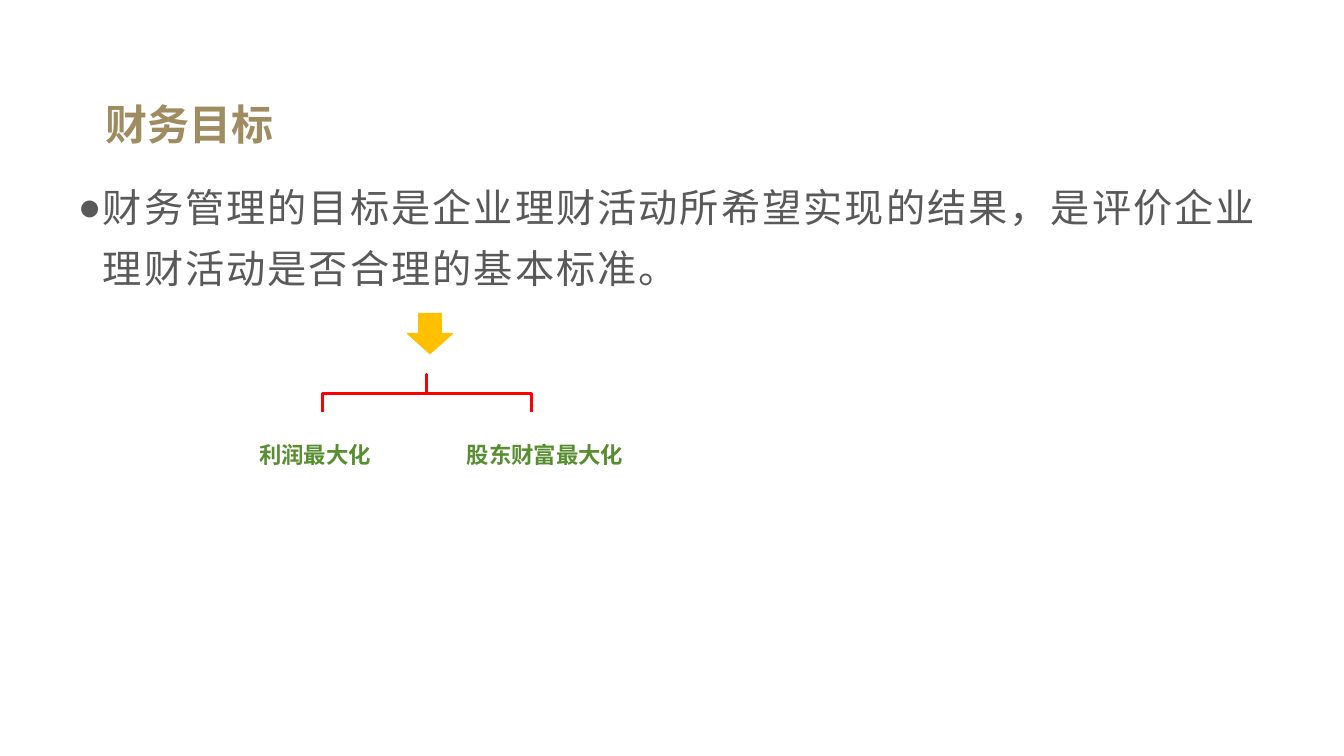
from lxml import etree
from pptx import Presentation
from pptx.dml.color import RGBColor
from pptx.enum.shapes import MSO_SHAPE
from pptx.enum.text import MSO_ANCHOR, MSO_AUTO_SIZE, PP_ALIGN
from pptx.oxml.ns import qn
from pptx.util import Pt

PX = 914400 / 100.8
GOLD = RGBColor(0x9F, 0x8C, 0x61)
GREY = RGBColor(0x59, 0x59, 0x59)
AMBER = RGBColor(0xFF, 0xC0, 0x00)
RED = RGBColor(0xFF, 0x00, 0x00)
GREEN = RGBColor(0x58, 0x8E, 0x31)
CJK_FONT = "Noto Sans CJK SC"
ARROW, BRACE = MSO_SHAPE.RIGHT_ARROW, MSO_SHAPE.RIGHT_BRACE
MIDDLE, TOP = MSO_ANCHOR.MIDDLE, MSO_ANCHOR.TOP
CENTER = PP_ALIGN.CENTER
GROW = MSO_AUTO_SIZE.SHAPE_TO_FIT_TEXT


def px(length):
    return round(length * PX)


def add_text(page, box, text, size, color, bold=False, font=CJK_FONT, anchor=TOP):
    """Place one paragraph in a wrapping text box and return its frame."""
    frame = page.shapes.add_textbox(*map(px, box)).text_frame
    frame.word_wrap = True
    frame.vertical_anchor = anchor
    frame.text = text
    span = frame.paragraphs[0].runs[0]
    span.font.size = Pt(size)
    span.font.bold = bold
    span.font.name = font
    span.font.color.rgb = color
    east_asian = etree.SubElement(span.font._element, qn("a:ea"))
    east_asian.set("typeface", CJK_FONT)
    return frame


def add_title(page, box):
    add_text(page, box, "财务目标", 30, GOLD, True, "Arial", MIDDLE)


def add_definition(page, box):
    frame = add_text(
        page, box,
        "财务管理的目标是企业理财活动所希望实现的结果，是评价企业理财活动是否合理的基本标准。",
        28, GREY)
    para = frame.paragraphs[0]
    para.line_spacing = 1.3
    para.space_after = Pt(10)
    # Hanging bullet and letter spacing
    properties = para._p.get_or_add_pPr()
    properties.set("marL", str(px(25)))
    properties.set("indent", str(-px(25)))
    etree.SubElement(properties, qn("a:buFont")).set("typeface", "Arial")
    etree.SubElement(properties, qn("a:buChar")).set("char", "●")
    para.runs[0].font._element.set("spc", "150")


def add_turned_shape(page, kind, box, angle, color, weight):
    shape = page.shapes.add_shape(kind, *map(px, box))
    shape.rotation = angle
    shape.shadow.inherit = False
    shape.line.color.rgb = color
    shape.line.width = Pt(weight)
    return shape


def add_goal_split(page, box):
    """Arrow and bracket leading to the two goals."""
    left, top, width, height = box

    # Arrow pointing down
    arrow = add_turned_shape(page, ARROW, (left + 190, top, 40, 45), 90, AMBER, 1)
    arrow.fill.solid()
    arrow.fill.fore_color.rgb = AMBER

    # Square bracket opening downwards
    bracket = add_turned_shape(page, BRACE, (left + 188, top - 22, 38, 209), 270, RED, 2.25)
    bracket.fill.background()
    bracket.adjustments[0] = 0
    bracket.adjustments[1] = 0.5

    # Goal labels along the lower edge
    goals = [("利润最大化", 0, 190), ("股东财富最大化", 202, width - 202)]
    for goal, offset, label_width in goals:
        label_box = (left + offset, top + height - 37, label_width, 37)
        frame = add_text(page, label_box, goal, 16, GREEN, True)
        frame.auto_size = GROW
        frame.paragraphs[0].alignment = CENTER


def main():
    deck = Presentation()
    deck.slide_width, deck.slide_height = px(1344), px(756)
    page = deck.slides.add_slide(deck.slide_layouts[6])
    add_title(page, (96, 85, 1210, 78))
    add_definition(page, (68, 164, 1210, 524))
    add_goal_split(page, (220, 311, 448, 162))
    deck.save("out.pptx")


if __name__ == "__main__":
    main()
